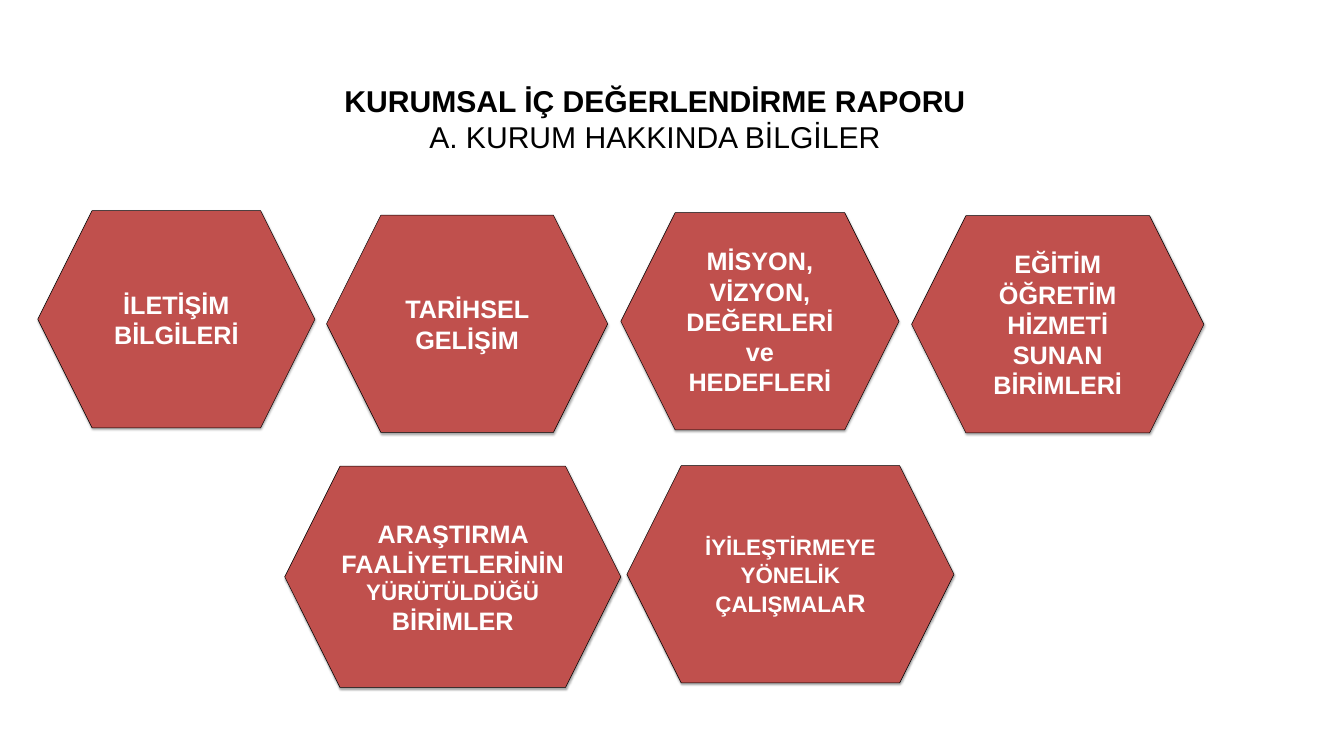
from dataclasses import dataclass

from lxml import etree
from pptx import Presentation
from pptx.dml.color import RGBColor
from pptx.enum import shapes, text
from pptx.oxml import ns
from pptx.util import Inches, Pt


@dataclass(frozen=True)
class Theme:
    font: str = "Arial"
    ink: str = "000000"
    light: str = "FFFFFF"
    red: str = "C0504D"
    title: int = 43
    label: int = 36
    small: int = 32
    outline: float = 0.75


THEME = Theme()

# Each hexagon: left, top, width, height, then its text runs with their sizes
HEXAGONS = [
    (0.75, 4.18, 5.5, 4.31, [("İLETİŞİM BİLGİLERİ", THEME.label)]),
    (18.09, 4.28, 5.8, 4.31,
     [("EĞİTİM ÖĞRETİM HİZMETİ SUNAN BİRİMLERİ", THEME.label)]),
    (12.32, 4.22, 5.52, 4.31,
     [("MİSYON, VİZYON, DEĞERLERİ ve HEDEFLERİ", THEME.label)]),
    (6.48, 4.27, 5.58, 4.31, [("TARİHSEL GELİŞİM", THEME.label)]),
    (5.65, 9.25, 6.67, 4.39,
     [("ARAŞTIRMA FAALİYETLERİNİN ", THEME.label),
      ("YÜRÜTÜLDÜĞÜ ", THEME.small), ("BİRİMLER", THEME.label)]),
    (12.44, 9.24, 6.49, 4.31,
     [("İYİLEŞTİRMEYE", THEME.small), (" ", THEME.label),
      ("YÖNELİK ÇALIŞMALA", THEME.small), ("R", THEME.label)]),
]


def add_span(para, words, *, size, color, bold=True):
    span = para.add_run()
    span.text = words
    span.font.name = THEME.font
    span.font.size = Pt(size)
    span.font.bold = bold
    span.font.color.rgb = RGBColor.from_string(color)


def set_frame(frame, anchor):
    frame.word_wrap = True
    frame.auto_size = text.MSO_AUTO_SIZE.NONE
    frame.vertical_anchor = anchor
    frame.margin_left = frame.margin_right = Inches(0.2)
    frame.margin_top = frame.margin_bottom = Inches(0.1)


def add_shadow(shape):
    shape.shadow.inherit = False
    effects = shape.element.spPr.find(ns.qn("a:effectLst"))
    shadow = etree.SubElement(
        effects, ns.qn("a:outerShdw"), blurRad=str(Pt(3.1)),
        dist=str(Pt(1.8)), dir="5400000", rotWithShape="0")
    color = etree.SubElement(shadow, ns.qn("a:srgbClr"), val=THEME.ink)
    etree.SubElement(color, ns.qn("a:alpha"), val="35000")


def add_title(page):
    box = page.shapes.title
    box.left, box.top = Inches(2.26), Inches(1.53)
    box.width, box.height = Inches(21.47), Inches(1.65)
    frame = box.text_frame
    set_frame(frame, text.MSO_ANCHOR.TOP)
    heading, subheading = frame.paragraphs[0], frame.add_paragraph()
    for para, words, bold in (
            (heading, "KURUMSAL İÇ DEĞERLENDİRME RAPORU", True),
            (subheading, "A. KURUM HAKKINDA BİLGİLER", False)):
        para.alignment = text.PP_ALIGN.CENTER
        add_span(para, words, size=THEME.title, color=THEME.ink, bold=bold)


def add_hexagon(page, left, top, width, height, spans):
    shape = page.shapes.add_shape(
        shapes.MSO_SHAPE.HEXAGON, Inches(left), Inches(top),
        Inches(width), Inches(height))
    shape.fill.solid()
    shape.fill.fore_color.rgb = RGBColor.from_string(THEME.red)
    shape.line.color.rgb = RGBColor.from_string(THEME.ink)
    shape.line.width = Pt(THEME.outline)
    add_shadow(shape)
    set_frame(shape.text_frame, text.MSO_ANCHOR.MIDDLE)
    para = shape.text_frame.paragraphs[0]
    para.alignment = text.PP_ALIGN.CENTER
    for words, size in spans:
        add_span(para, words, size=size, color=THEME.light)


def main():
    deck = Presentation()
    deck.slide_width, deck.slide_height = Inches(26.67), Inches(15)
    page = deck.slides.add_slide(deck.slide_layouts.get_by_name("Title Only"))

    # Report title and section
    add_title(page)

    # Topics of the section
    for hexagon in HEXAGONS:
        add_hexagon(page, *hexagon)

    deck.save("out.pptx")


if __name__ == "__main__":
    main()
